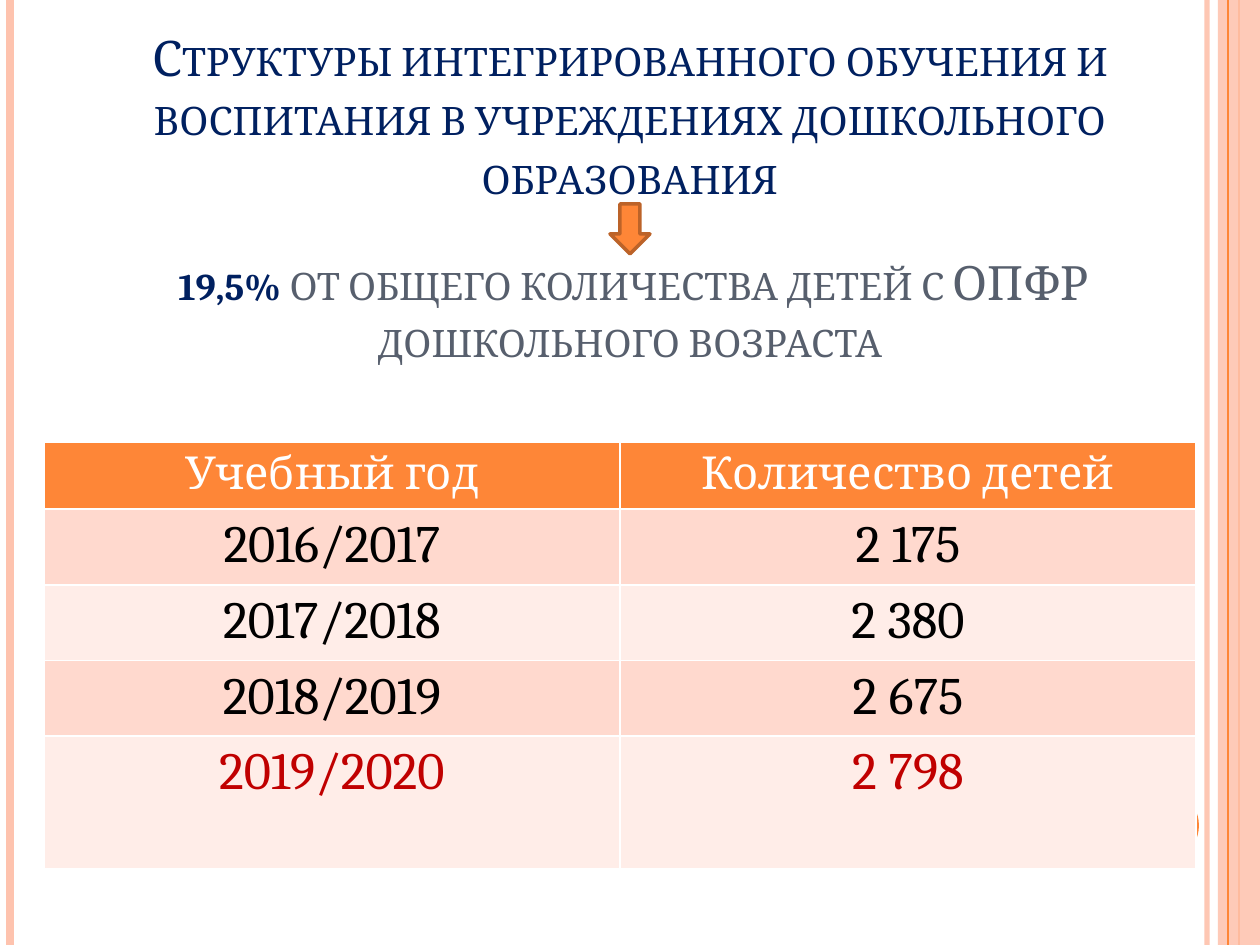
from lxml import etree
from pptx import Presentation
from pptx.dml.color import RGBColor
from pptx.enum.shapes import MSO_CONNECTOR, MSO_SHAPE
from pptx.enum.text import MSO_ANCHOR, PP_ALIGN
from pptx.oxml.ns import qn
from pptx.util import Emu, Pt

STRAIGHT = MSO_CONNECTOR.STRAIGHT
RECT, OVAL, DOWN_ARROW = MSO_SHAPE.RECTANGLE, MSO_SHAPE.OVAL, MSO_SHAPE.DOWN_ARROW
CENTER, BOTTOM = PP_ALIGN.CENTER, MSO_ANCHOR.BOTTOM

WHITE = RGBColor(0xFF, 0xFF, 0xFF)
BLACK = RGBColor(0, 0, 0)
ORANGE = RGBColor(0xFE, 0x86, 0x37)
BROWN = RGBColor(0xBC, 0x63, 0x29)
PEACH = RGBColor(0xFE, 0xC3, 0xAE)
BAND_DARK = RGBColor(0xFF, 0xD9, 0xCE)
BAND_LIGHT = RGBColor(0xFF, 0xED, 0xE8)
NAVY = RGBColor(0x00, 0x20, 0x60)
GREY = RGBColor(0x57, 0x5F, 0x6D)
RED = RGBColor(0xC0, 0, 0)

FONT = "Cambria"
EMU_PER_PX = 914400 / 126
WIDTH, HEIGHT = 1260, 945

# x, colour, line width in points, opacity in percent
STRIPES_BELOW = [(1207, PEACH, 3, 93), (10, PEACH, 4.5, 100), (1239, ORANGE, 1.5, 100)]
STRIPE_ABOVE = (1228, ORANGE, 0.75, 100)

ROWS = [
    ("Учебный год", "Количество детей"),
    ("2016/2017", "2 175"),
    ("2017/2018", "2 380"),
    ("2018/2019", "2 675"),
    ("2019/2020", "2 798"),
]
ROW_HEIGHTS = [64, 73, 73, 73, 133]
COL_WIDTH = 576


def px(n):
    return Emu(round(n * EMU_PER_PX))


def set_alpha(sp, percent):
    color = next(sp._element.spPr.iter(qn("a:srgbClr")))
    etree.SubElement(color, qn("a:alpha")).set("val", str(percent * 1000))


def add_stripe(s, x, color, width, opacity):
    line = s.shapes.add_connector(STRAIGHT, px(x), 0, px(x), px(HEIGHT))
    line.line.color.rgb = color
    line.line.width = Pt(width)
    if opacity < 100:
        set_alpha(line, opacity)
    etree.SubElement(line._element.spPr, qn("a:effectLst"))


def add_shape(s, kind, x, y, w, h, fill, outline=None):
    sp = s.shapes.add_shape(kind, px(x), px(y), px(w), px(h))
    sp.shadow.inherit = False
    sp.fill.solid()
    sp.fill.fore_color.rgb = fill
    if outline is None:
        sp.line.fill.background()
    else:
        sp.line.color.rgb = outline
        sp.line.width = Pt(2)
    return sp


def format_run(r, size, color, bold=False):
    r.font.name = FONT
    r.font.size = Pt(size)
    r.font.color.rgb = color
    r.font.bold = bold


def add_title(s, x, y, w, h, paragraphs, gap):
    tf = s.shapes.add_textbox(px(x), px(y), px(w), px(h)).text_frame
    tf.word_wrap = True
    tf.vertical_anchor = BOTTOM
    for i, runs in enumerate(paragraphs):
        p = tf.add_paragraph() if i else tf.paragraphs[0]
        p.alignment = CENTER
        p.space_before = Pt(gap if i else 0)
        for text, size, color, bold in runs:
            r = p.add_run()
            r.text = text
            format_run(r, size, color, bold)
            r.font._element.set("cap", "small")


def set_borders(cell, color, width):
    tcPr = cell._tc.get_or_add_tcPr()
    for i, side in enumerate(("a:lnL", "a:lnR", "a:lnT", "a:lnB")):
        ln = etree.Element(qn(side), w=str(Pt(width)))
        fill = etree.SubElement(ln, qn("a:solidFill"))
        etree.SubElement(fill, qn("a:srgbClr"), val=str(color))
        tcPr.insert(i, ln)


def row_style(i):
    """Fill, text colour and text size of a table row."""
    if i == 0:
        return ORANGE, WHITE, 26
    fill = BAND_DARK if i % 2 else BAND_LIGHT
    return fill, RED if i == len(ROWS) - 1 else BLACK, 30


def add_table(s, x, y):
    cols = len(ROWS[0])
    table = s.shapes.add_table(len(ROWS), cols, px(x), px(y),
                               px(COL_WIDTH * cols), px(sum(ROW_HEIGHTS))).table
    for col in table.columns:
        col.width = px(COL_WIDTH)
    for i, values in enumerate(ROWS):
        table.rows[i].height = px(ROW_HEIGHTS[i])
        fill, color, size = row_style(i)
        for j, value in enumerate(values):
            cell = table.cell(i, j)
            cell.fill.solid()
            cell.fill.fore_color.rgb = fill
            set_borders(cell, WHITE, 1)
            p = cell.text_frame.paragraphs[0]
            p.text = value
            p.alignment = CENTER
            format_run(p.runs[0], size, color)


def main():
    prs = Presentation()
    prs.slide_width, prs.slide_height = px(WIDTH), px(HEIGHT)
    s = prs.slides.add_slide(prs.slide_layouts[6])

    # Side stripes and corner disc
    for stripe in STRIPES_BELOW:
        add_stripe(s, *stripe)
    band = add_shape(s, RECT, 1218, 0, 42, HEIGHT, PEACH)
    set_alpha(band, 87)
    add_stripe(s, *STRIPE_ABOVE)
    add_shape(s, OVAL, 1124, 788, 75, 75, ORANGE)

    # Title with the share of children below it
    add_title(s, 63, 16, 1134, 357, [
        [("Структуры интегрированного обучения и воспитания "
          "в учреждениях дошкольного образования", 28, NAVY, False)],
        [(" ", 24, GREY, False),
         ("19,5% ", 27, NAVY, True),
         ("от общего количества детей с ОПФР дошкольного возраста", 27, GREY, False)],
    ], gap=28)

    # Children by school year
    add_table(s, 44, 442)

    # Arrow between the two title parts
    add_shape(s, DOWN_ARROW, 610, 204, 40, 50, ORANGE, BROWN)

    prs.save("out.pptx")


if __name__ == "__main__":
    main()
